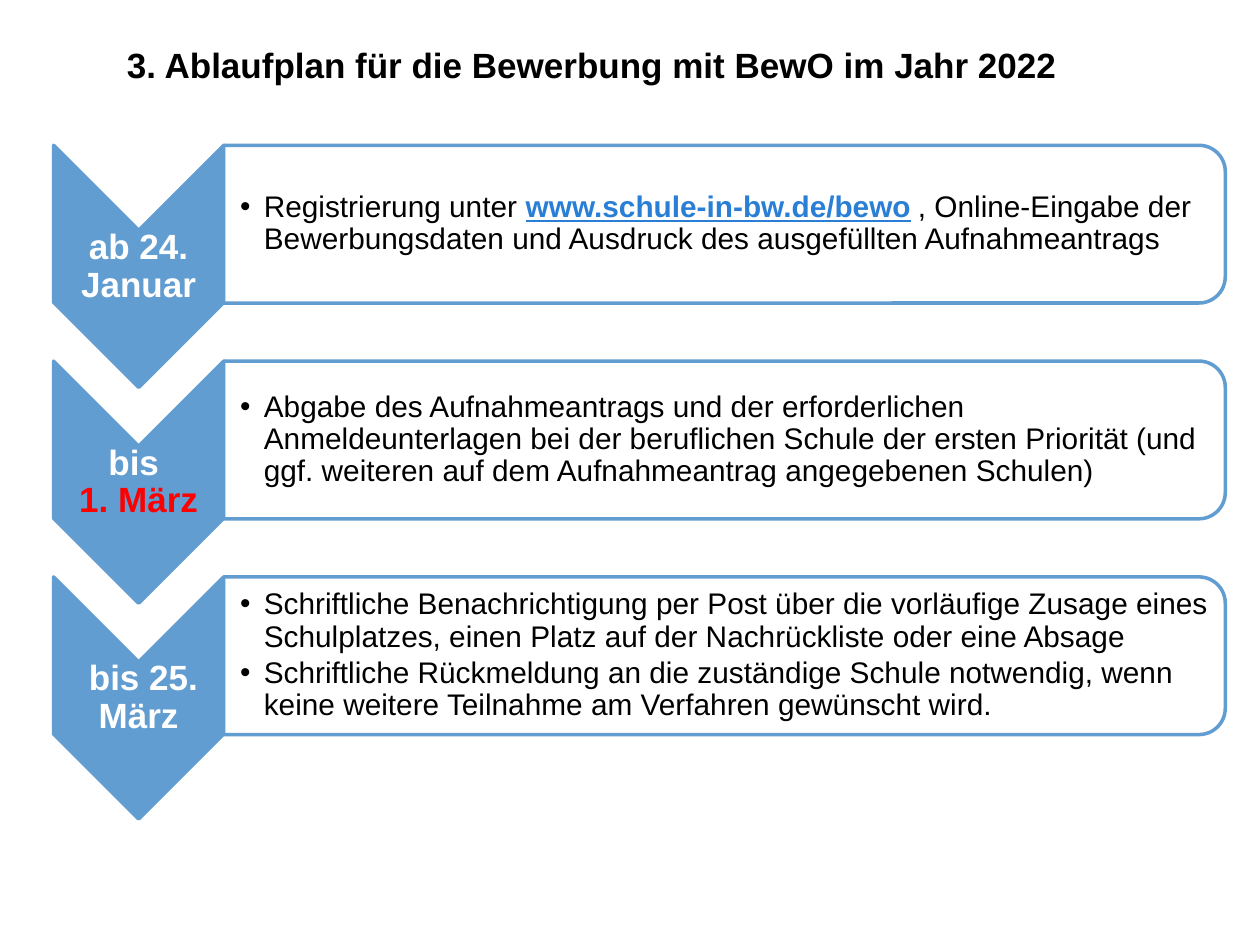
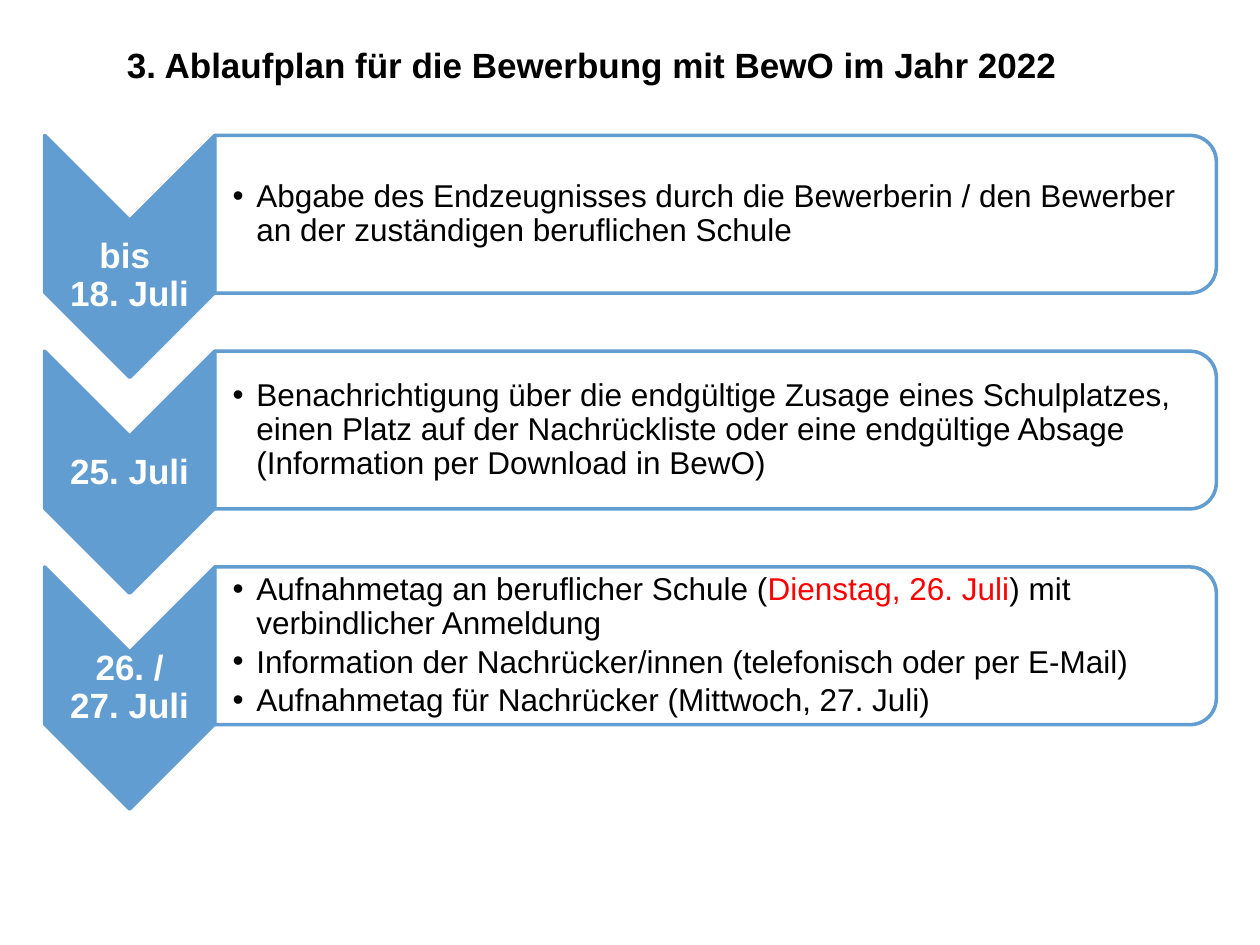
from lxml.etree import SubElement
from pptx import Presentation
from pptx.dml.color import RGBColor
from pptx.enum.shapes import MSO_SHAPE
from pptx.enum.text import MSO_ANCHOR, MSO_AUTO_SIZE, PP_ALIGN
from pptx.oxml.ns import qn
from pptx.util import Cm, Pt

COLORS = {"accent": "629DD1", "paper": "FFFFFF", "ink": "000000",
          "alert": "FF0000", "address": "297FD5"}
FONT = "Arial"
TITLE = "3. Ablaufplan für die Bewerbung mit BewO im Jahr 2022"

# Layout of one step, in centimetres
ARROW_WIDTH, ARROW_HEIGHT = 3.43, 4.88
BAND_WIDTH, BAND_HEIGHT = 20.19, 3.18
STEP_PITCH = 4.35
DATE_TOP, DATE_HEIGHT = 1.71, 1.48
DETAIL_MARGIN = 0.15
INDENT = 0.48

# A line is a list of (text, format) spans; "color" is a key of COLORS.
RED = {"color": "alert"}
ADDRESS = {"color": "address", "bold": True, "underline": True}

SCHEDULE = [
    {"left": 1.08, "top": 2.93, "size": 17, "inset": 0.33, "steps": [
        {"date": [[("ab 24.", {})], [("Januar", {})]],
         "details": [[("Registrierung unter ", {}),
                      ("www.schule-in-bw.de/bewo", ADDRESS),
                      (" ", {"name": "Calibri", "bold": True}),
                      (", Online-Eingabe der Bewerbungsdaten und Ausdruck des "
                       "ausgefüllten Aufnahmeantrags", {})]]},
        {"date": [[("bis ", {})], [("1. März", RED)]],
         "details": [[("Abgabe des Aufnahmeantrags und der erforderlichen "
                       "Anmeldeunterlagen bei der beruflichen Schule der ersten "
                       "Priorität (und ggf. weiteren auf dem Aufnahmeantrag "
                       "angegebenen Schulen)", {})]]},
        {"date": [[(" bis 25. März", {})]],
         "details": [[("Schriftliche Benachrichtigung per Post über die vorläufige "
                       "Zusage eines Schulplatzes, einen Platz auf der "
                       "Nachrückliste oder eine Absage", {})],
                     [("Schriftliche Rückmeldung an die zuständige Schule "
                       "notwendig, wenn keine weitere Teilnahme am Verfahren "
                       "gewünscht wird.", {})]]},
    ]},
    {"left": 0.9, "top": 2.73, "size": 18, "inset": 0.36, "steps": [
        {"date": [[("bis ", {})], [("18. Juli", {})]], "date_drop": 0.38,
         "details": [[("Abgabe des Endzeugnisses durch die Bewerberin / den "
                       "Bewerber an der zuständigen beruflichen Schule", {})]]},
        {"date": [[("25. Juli", {})]],
         "details": [[("Benachrichtigung über die endgültige Zusage eines "
                       "Schulplatzes, einen Platz auf der Nachrückliste oder eine "
                       "endgültige Absage (Information per Download in BewO)", {})]]},
        {"date": [[("26. /", {})], [("27. Juli", {})]],
         "details": [[("Aufnahmetag an beruflicher Schule (", {}),
                      ("Dienstag, 26. Juli", RED),
                      (") mit verbindlicher Anmeldung", {})],
                     [("Information der Nachrücker/innen (telefonisch oder per "
                       "E-Mail)", {})],
                     [("Aufnahmetag für Nachrücker (Mittwoch, 27. Juli)", {})]]},
    ]},
]


def set_all(target, values):
    for name, value in values.items():
        setattr(target, name, value)


def rgb(name):
    return RGBColor.from_string(COLORS[name])


class SchedulePages:
    """Holds the deck, its style and the page being drawn."""

    def __init__(self):
        self.deck = Presentation()
        set_all(self.deck, {"slide_width": Cm(25.4), "slide_height": Cm(19.05)})
        self.page = None

    def add_page(self):
        self.page = self.deck.slides.add_slide(self.deck.slide_layouts[6])

    def add_spans(self, para, spans, style):
        for text, changes in spans:
            values = {"name": FONT, **style, **changes}
            span = para.add_run()
            span.text = text
            span.font.color.rgb = rgb(values.pop("color"))
            set_all(span.font, values)

    def add_text_box(self, left, top, width, height, frame_format):
        box = self.page.shapes.add_textbox(Cm(left), Cm(top), Cm(width), Cm(height))
        set_all(box.text_frame, {"word_wrap": True, **frame_format})
        return box.text_frame

    def add_title(self, text):
        frame = self.add_text_box(2.31, 0.33, 22.8, 1.55,
                                  {"auto_size": MSO_AUTO_SIZE.SHAPE_TO_FIT_TEXT})
        para = frame.paragraphs[0]
        para.line_spacing = 1.5
        self.add_spans(para, [(text, {})],
                       {"size": Pt(20), "bold": True, "color": "ink"})

    def add_turned_shape(self, kind, left, top, width, height, fill):
        """Add a shape turned by 90°; the lengths are those seen after the turn."""
        shift = (width - height) / 2
        shape = self.page.shapes.add_shape(kind, Cm(left + shift), Cm(top - shift),
                                           Cm(height), Cm(width))
        shape.rotation = 90
        shape.shadow.inherit = False
        shape.fill.solid()
        shape.fill.fore_color.rgb = rgb(fill)
        shape.line.color.rgb = rgb("accent")
        shape.line.width = Pt(2)
        return shape

    def add_arrow(self, left, top):
        self.add_turned_shape(MSO_SHAPE.CHEVRON, left, top,
                              ARROW_WIDTH, ARROW_HEIGHT, "accent")

    def add_band(self, left, top):
        band = self.add_turned_shape(MSO_SHAPE.ROUND_2_SAME_RECTANGLE, left, top,
                                     BAND_WIDTH, BAND_HEIGHT, "paper")
        color = band.fill._xPr.find(qn("a:solidFill")).find(qn("a:srgbClr"))
        SubElement(color, qn("a:alpha"), val="90000")

    def middle_frame(self, left_inset):
        margins = {f"margin_{side}": Cm(0.03) for side in ("right", "top", "bottom")}
        return {"vertical_anchor": MSO_ANCHOR.MIDDLE,
                "margin_left": Cm(left_inset), **margins}

    def add_date(self, left, top, lines):
        frame = self.add_text_box(left, top, ARROW_WIDTH, DATE_HEIGHT,
                                  self.middle_frame(0.03))
        para = frame.paragraphs[0]
        set_all(para, {"alignment": PP_ALIGN.CENTER, "line_spacing": 0.9})
        for number, spans in enumerate(lines):
            if number:
                para.add_line_break()
            self.add_spans(para, spans,
                           {"size": Pt(20), "bold": True, "color": "paper"})

    def add_details(self, left, top, lines, size, inset):
        frame = self.add_text_box(left, top + DETAIL_MARGIN,
                                  BAND_WIDTH - DETAIL_MARGIN,
                                  BAND_HEIGHT - 2 * DETAIL_MARGIN,
                                  self.middle_frame(inset))
        for number, spans in enumerate(lines):
            para = frame.add_paragraph() if number else frame.paragraphs[0]
            set_all(para, {"line_spacing": 0.9, "space_after": Pt(2.5)})
            self.add_bullet(para)
            self.add_spans(para, spans, {"size": Pt(size), "color": "ink"})

    def add_bullet(self, para):
        properties = para._p.get_or_add_pPr()
        properties.set("marL", str(Cm(INDENT)))
        properties.set("indent", str(-Cm(INDENT)))
        SubElement(properties, qn("a:buFont"), typeface=FONT)
        SubElement(properties, qn("a:buChar"), char="•")

    def add_step(self, left, top, step, size, inset):
        band_left = left + ARROW_WIDTH
        self.add_arrow(left, top)
        self.add_date(left, top + DATE_TOP + step.get("date_drop", 0), step["date"])
        self.add_band(band_left, top)
        self.add_details(band_left, top, step["details"], size, inset)


def main():
    pages = SchedulePages()
    for part in SCHEDULE:
        pages.add_page()
        pages.add_title(TITLE)
        for number, step in enumerate(part["steps"]):
            pages.add_step(part["left"], part["top"] + number * STEP_PITCH,
                           step, part["size"], part["inset"])
    pages.deck.save("out.pptx")


if __name__ == "__main__":
    main()
